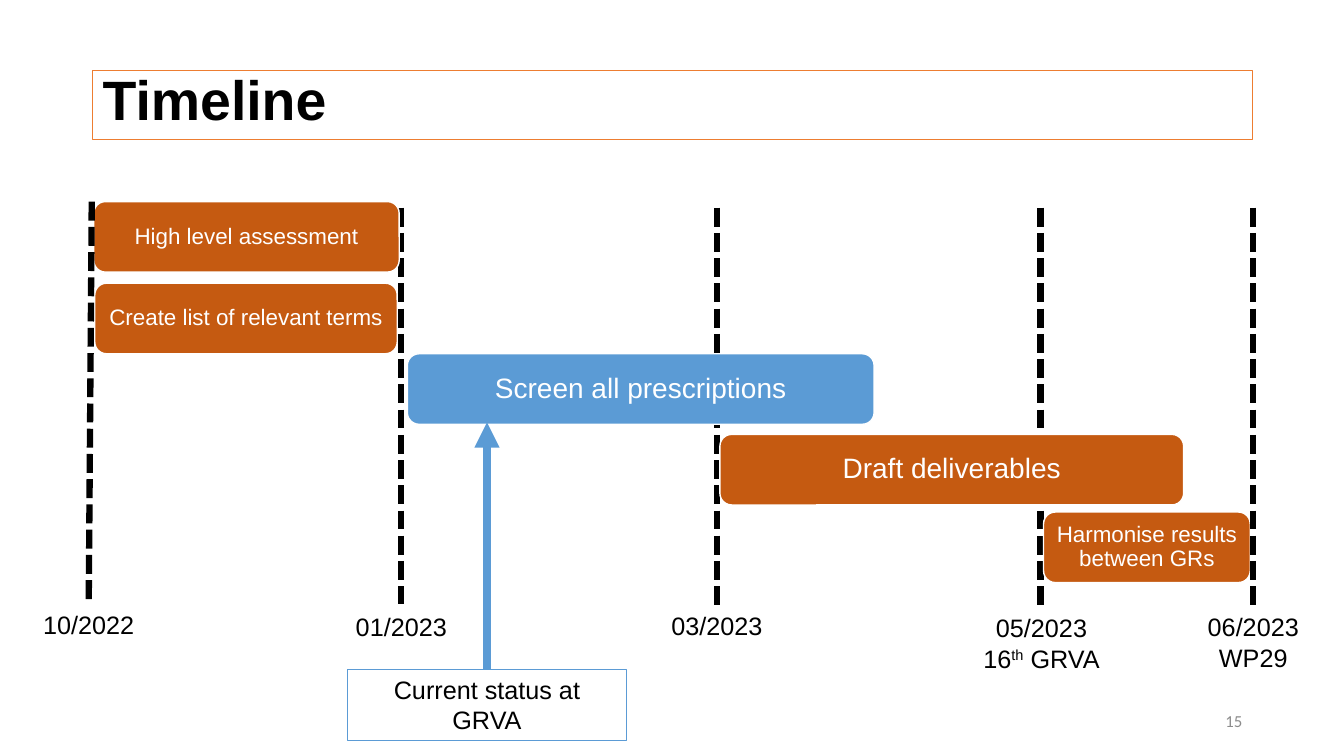
from lxml import etree
from pptx import Presentation
from pptx.dml.color import RGBColor
from pptx.enum import dml, shapes, text
from pptx.oxml import ns
from pptx.util import Inches, Pt

BLACK = RGBColor(0x00, 0x00, 0x00)
WHITE = RGBColor(0xFF, 0xFF, 0xFF)
GREY = RGBColor(0x8C, 0x8C, 0x8C)
ORANGE = RGBColor(0xED, 0x7D, 0x31)
RUST = RGBColor(0xC5, 0x5A, 0x11)
BLUE = RGBColor(0x5B, 0x9B, 0xD5)

LEFT, CENTER, RIGHT = text.PP_ALIGN.LEFT, text.PP_ALIGN.CENTER, text.PP_ALIGN.RIGHT
TOP, MIDDLE = text.MSO_ANCHOR.TOP, text.MSO_ANCHOR.MIDDLE
RECTANGLE = shapes.MSO_SHAPE.RECTANGLE
ROUNDED = shapes.MSO_SHAPE.ROUNDED_RECTANGLE

# Dashed date lines: top x, bottom x, top y, bottom y
INNER_LINES = [(7.11, 7.11, 2.06, 6), (10.32, 10.32, 2.06, 6), (3.98, 3.98, 2.06, 5.99)]
OUTER_LINES = [(0.91, 0.88, 2, 6), (12.43, 12.43, 2.06, 6.02)]

# Task bars: label, left, top, width, colour, text size
BAR_HEIGHT = 0.7
TASKS = [
    ("High level assessment", 0.93, 2, 3.03, RUST, 16),
    ("Create list of relevant terms", 0.94, 2.81, 3, RUST, 16),
    ("Screen all prescriptions", 4.04, 3.51, 4.63, BLUE, 20),
    ("Draft deliverables", 7.14, 4.31, 4.6, RUST, 20),
    ("Harmonise results between GRs", 10.35, 5.08, 2.05, RUST, 16),
]

# Date labels: centre, top, width, paragraphs of (text, superscript) runs
DATES = [
    (0.88, 6, 1.29, [[("10/2022", False)]]),
    (3.98, 6.02, 1.29, [[("01/2023", False)]]),
    (7.11, 6.01, 1.29, [[("03/2023", False)]]),
    (10.33, 6.03, 1.46, [[("05/2023", False)],
                         [("16", False), ("th", True), (" GRVA", False)]]),
    (12.43, 6.02, 1.29, [[("06/2023", False)], [("WP29", False)]]),
]


def apply(target, values):
    for name, value in values.items():
        setattr(target, name, value)


def write(shape, paragraphs, size, color=BLACK, font="Arial", bold=False,
          align=CENTER, anchor=TOP, spacing=1.0, side=0.1, inset=0.05):
    frame = shape.text_frame
    apply(frame, {"word_wrap": True, "vertical_anchor": anchor,
                  "margin_left": Inches(side), "margin_right": Inches(side),
                  "margin_top": Inches(inset), "margin_bottom": Inches(inset)})
    for index, runs in enumerate(paragraphs):
        paragraph = frame.add_paragraph() if index else frame.paragraphs[0]
        apply(paragraph, {"alignment": align, "line_spacing": spacing})
        for content, superscript in runs:
            run = paragraph.add_run()
            run.text = content
            apply(run.font, {"name": font, "size": Pt(size), "bold": bold})
            run.font.color.rgb = color
            if superscript:
                run.font._element.set("baseline", "30000")


def add_box(slide, kind, box, line, width, fill=None):
    shape = slide.shapes.add_shape(kind, *map(Inches, box))
    shape.shadow.inherit = False
    if fill is None:
        shape.fill.background()
    else:
        shape.fill.solid()
        shape.fill.fore_color.rgb = fill
    shape.line.color.rgb = line
    shape.line.width = Pt(width)
    return shape


def add_line(slide, start, end, color, width):
    line = slide.shapes.add_connector(
        shapes.MSO_CONNECTOR.STRAIGHT, *map(Inches, start + end))
    line.line.color.rgb = color
    line.line.width = Pt(width)
    etree.SubElement(line._element.spPr, ns.qn("a:effectLst"))
    return line


def add_label(slide, box, paragraphs, size, **style):
    label = slide.shapes.add_textbox(*map(Inches, box))
    write(label, paragraphs, size, **style)


def add_title(slide, box):
    title = add_box(slide, RECTANGLE, box, ORANGE, 0.75)
    write(title, [[("Timeline", False)]], 39.6, bold=True, align=LEFT,
          anchor=MIDDLE, spacing=0.8)


def add_date_lines(slide, lines):
    for top_x, bottom_x, top, bottom in lines:
        line = add_line(slide, (top_x, top), (bottom_x, bottom), BLACK, 4.5)
        line.line.dash_style = dml.MSO_LINE.SQUARE_DOT


def add_task_bars(slide):
    for label, left, top, width, color, size in TASKS:
        bar = add_box(slide, ROUNDED, (left, top, width, BAR_HEIGHT), WHITE, 1, color)
        # The rounded corners already inset the text, so the margins stay small
        write(bar, [[(label, False)]], size, color=WHITE, anchor=MIDDLE,
              spacing=0.9, side=0.05, inset=0.03)


def add_dates(slide):
    for center, top, width, paragraphs in DATES:
        height = 0.4 if len(paragraphs) == 1 else 0.71
        add_label(slide, (center - width / 2, top, width, height), paragraphs, 18)


def add_status(slide, box, arrow_tip):
    left, top, width, height = box
    status = add_box(slide, RECTANGLE, box, BLUE, 0.75)
    write(status, [[("Current status at GRVA", False)]], 18)
    center = left + width / 2
    arrow = add_line(slide, (center, top), (center, arrow_tip), BLUE, 6)
    arrow.begin_connect(status, 0)
    outline = arrow.line._get_or_add_ln()
    etree.SubElement(outline, ns.qn("a:tailEnd"), type="triangle")


def build_timeline(slide):
    add_date_lines(slide, INNER_LINES)
    add_title(slide, (0.92, 0.7, 11.5, 0.68))
    add_task_bars(slide)
    add_date_lines(slide, OUTER_LINES)
    add_dates(slide)
    add_status(slide, (3.45, 6.64, 2.76, 0.71), arrow_tip=4.19)
    # Slide number
    add_label(slide, (9.42, 6.95, 3, 0.4), [[("15", False)]], 12, color=GREY,
              font="Calibri", align=RIGHT, anchor=MIDDLE)


def main():
    presentation = Presentation()
    apply(presentation, {"slide_width": Inches(13.33), "slide_height": Inches(7.5)})
    build_timeline(presentation.slides.add_slide(presentation.slide_layouts[6]))
    presentation.save("out.pptx")


if __name__ == "__main__":
    main()
